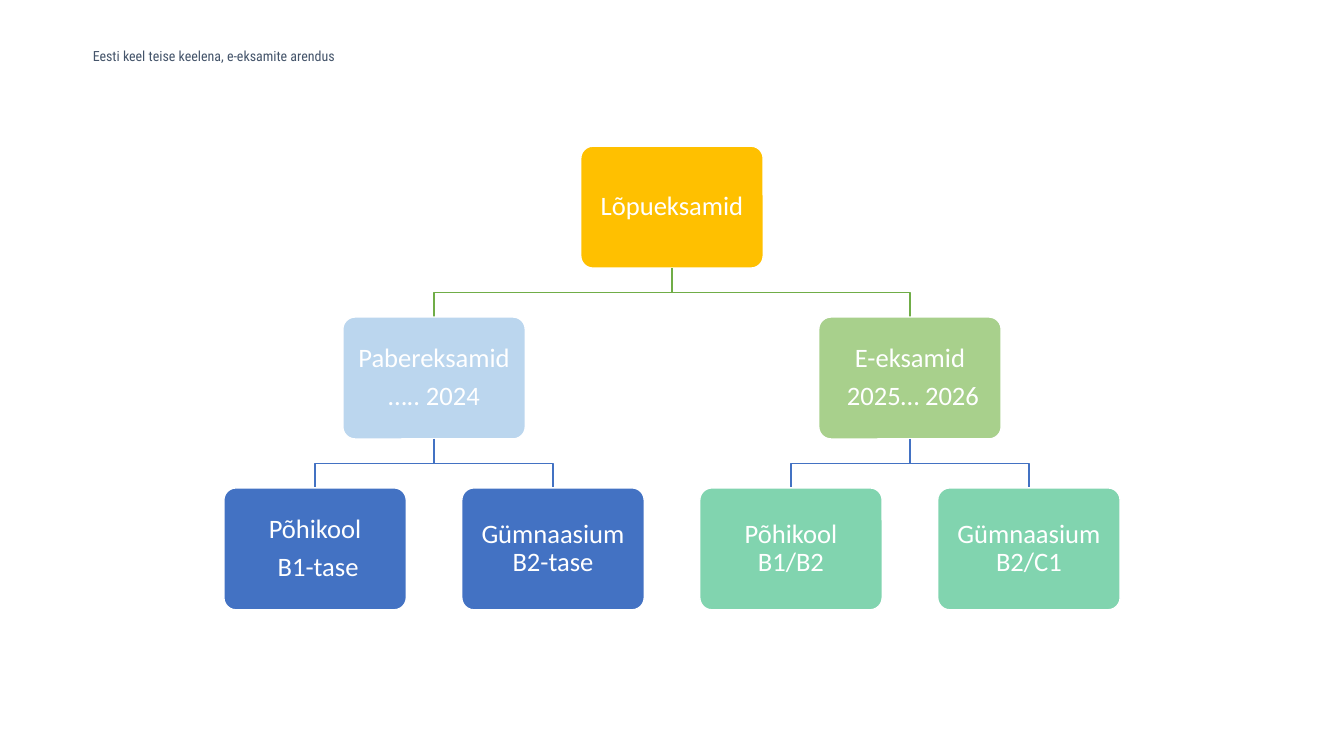
from pptx import Presentation
from pptx.dml.color import RGBColor
from pptx.enum.shapes import MSO_SHAPE
from pptx.enum.text import MSO_ANCHOR, PP_ALIGN
from pptx.util import Inches, Pt

WHITE = RGBColor(0xFF, 0xFF, 0xFF)
SLATE = RGBColor(0x44, 0x54, 0x6A)
AMBER = RGBColor(0xFF, 0xC0, 0x00)
PALE_BLUE = RGBColor(0xBB, 0xD6, 0xEE)
BLUE = RGBColor(0x43, 0x72, 0xC3)
PALE_GREEN = RGBColor(0xA8, 0xD0, 0x8C)
GREEN = RGBColor(0x70, 0xAD, 0x47)
MINT = RGBColor(0x81, 0xD4, 0xAF)

HEADING = "Eesti keel teise keelena, e-eksamite arendus"
# Each exam: (lines, fill, branches)
EXAMS = (["Lõpueksamid"], AMBER, [
    (["Pabereksamid", "….. 2024"], PALE_BLUE, [
        (["Põhikool", " B1-tase"], BLUE, []),
        (["Gümnaasium B2-tase"], BLUE, []),
    ]),
    (["E-eksamid", " 2025… 2026"], PALE_GREEN, [
        (["Põhikool B1/B2"], MINT, []),
        (["Gümnaasium B2/C1"], MINT, []),
    ]),
])
LINK_COLORS = [GREEN, BLUE]  # by level of the upper exam

SLIDE_W, SLIDE_H = Inches(13.33), Inches(7.5)
BOX_W, BOX_H = Inches(1.81), Inches(1.21)
COLUMN_PITCH, LEVEL_PITCH = Inches(2.36), Inches(1.695)
TREE_TOP = Inches(1.45)
INSET = Inches(0.08)


def set_insets(frame, inset):
    frame.margin_left = frame.margin_right = inset
    frame.margin_top = frame.margin_bottom = inset


def leaf_count(exam):
    branches = exam[2]
    return sum(map(leaf_count, branches)) if branches else 1


def add_link(shapes, upper_x, upper_y, lower_x, lower_y, color):
    """Draw a right-angled line that turns halfway down."""
    middle_y = (upper_y + lower_y) // 2
    builder = shapes.build_freeform(upper_x, upper_y)
    builder.add_line_segments(
        [(upper_x, middle_y), (lower_x, middle_y), (lower_x, lower_y)], close=False)
    link = builder.convert_to_shape()
    link.shadow.inherit = False
    link.fill.background()
    link.line.color.rgb = color
    link.line.width = Pt(1)


def add_box(shapes, center_x, top, lines, fill):
    box = shapes.add_shape(
        MSO_SHAPE.ROUNDED_RECTANGLE, center_x - BOX_W // 2, top, BOX_W, BOX_H)
    box.adjustments[0] = 0.1
    box.shadow.inherit = False
    box.fill.solid()
    box.fill.fore_color.rgb = fill
    box.line.color.rgb = WHITE
    box.line.width = Pt(1)
    frame = box.text_frame
    frame.word_wrap = True
    frame.vertical_anchor = MSO_ANCHOR.MIDDLE
    set_insets(frame, INSET)
    frame.text = "\n".join(lines)
    for index, paragraph in enumerate(frame.paragraphs):
        paragraph.alignment = PP_ALIGN.CENTER
        paragraph.line_spacing = 0.9
        if index:
            paragraph.space_before = Pt(6.7)
        paragraph.font.name = "Calibri"
        paragraph.font.size = Pt(19)
        paragraph.font.color.rgb = WHITE


def add_exam(shapes, exam, left, level=0):
    """Draw an exam centred over its leaf columns, then its branches."""
    lines, fill, branches = exam
    center_x = left + leaf_count(exam) * COLUMN_PITCH // 2
    top = TREE_TOP + level * LEVEL_PITCH
    add_box(shapes, center_x, top, lines, fill)
    for branch in branches:
        width = leaf_count(branch) * COLUMN_PITCH
        add_link(shapes, center_x, top + BOX_H, left + width // 2,
                 top + LEVEL_PITCH, LINK_COLORS[level])
        add_exam(shapes, branch, left, level + 1)
        left += width


def main():
    deck = Presentation()
    deck.slide_width, deck.slide_height = SLIDE_W, SLIDE_H
    shapes = deck.slides.add_slide(deck.slide_layouts[6]).shapes

    heading = shapes.add_textbox(
        Inches(0.92), Inches(0.49), Inches(8.48), Inches(0.24)).text_frame
    heading.word_wrap = True
    set_insets(heading, 0)
    heading.text = HEADING
    paragraph = heading.paragraphs[0]
    paragraph.line_spacing = 0.9
    paragraph.font.name = "Roboto Condensed"
    paragraph.font.size = Pt(10)
    paragraph.font.color.rgb = SLATE

    tree_left = (SLIDE_W - leaf_count(EXAMS) * COLUMN_PITCH) // 2
    add_exam(shapes, EXAMS, tree_left)
    deck.save("out.pptx")


if __name__ == "__main__":
    main()
